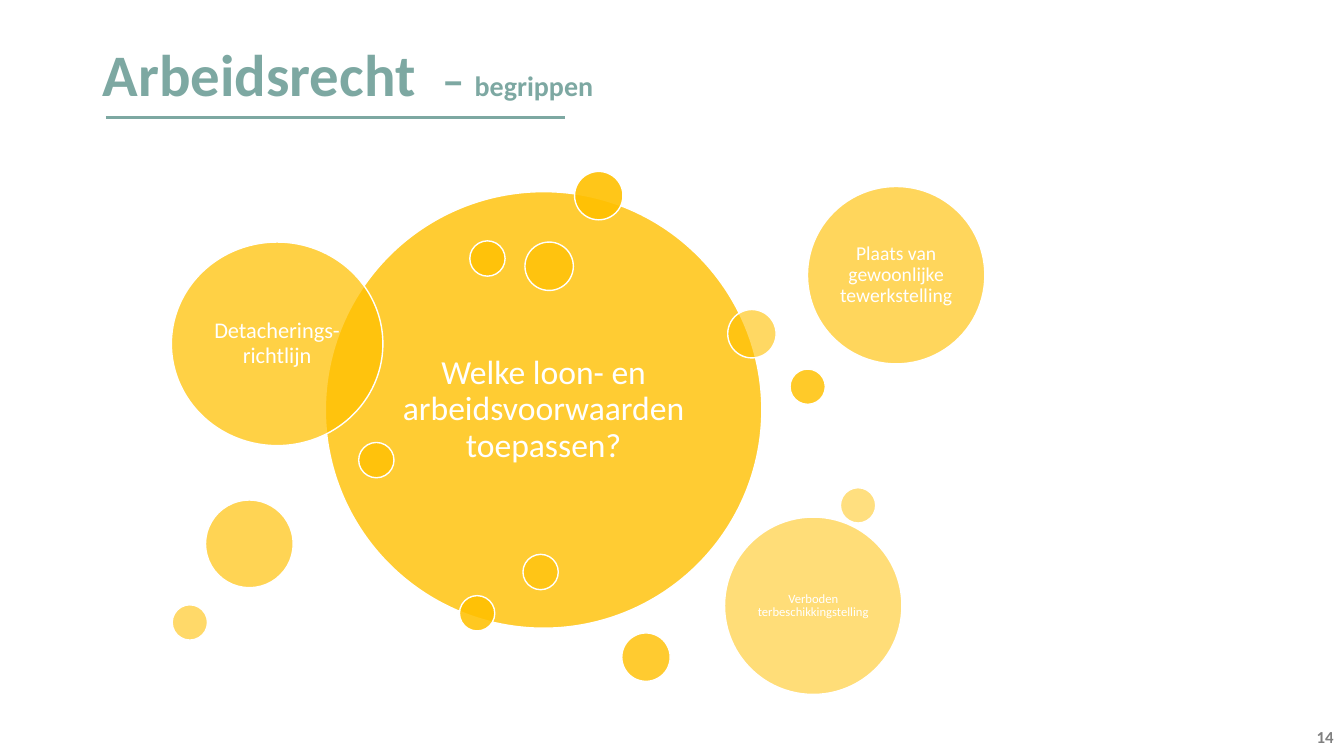
from dataclasses import dataclass

from lxml.etree import SubElement
from pptx import Presentation
from pptx.dml.color import RGBColor
from pptx.enum.shapes import MSO_CONNECTOR, MSO_SHAPE
from pptx.enum.text import MSO_ANCHOR, PP_ALIGN
from pptx.oxml.ns import qn
from pptx.slide import Slide
from pptx.text.text import Font
from pptx.util import Cm, Pt

HUES = {"teal": "7DA8A2", "gold": "FFC000", "white": "FFFFFF", "gray": "808080"}
DOT, BALL, DISC = 0.89, 1.22, 4.47


@dataclass
class Bubble:
    left: float
    top: float
    width: float
    height: float = 0
    text: str = ""
    size: float = 0
    inset: float = 0


HUB = Bubble(8.2, 4.83, 11, text="Welke loon- en arbeidsvoorwaarden toepassen?",
             size=24, inset=0.25)
ORBIT = [
    Bubble(14.48, 4.32, BALL),
    Bubble(11.58, 15.01, DOT),
    Bubble(19.91, 9.3, DOT),
    Bubble(15.67, 15.95, BALL),
    Bubble(11.84, 6.07, DOT),
    Bubble(9.04, 11.15, DOT),
    Bubble(4.32, 6.1, 5.33, 5.13, "Detacherings-richtlijn", 16, 0.18),
    Bubble(13.23, 6.1, BALL),
    Bubble(5.18, 12.6, 2.21),
    Bubble(20.35, 4.7, DISC, text="Plaats van gewoonlijke tewerkstelling",
           size=14, inset=0.15),
    Bubble(18.34, 7.8, BALL),
    Bubble(4.34, 15.24, DOT),
    Bubble(13.18, 13.97, DOT),
    Bubble(18.26, 13.03, DISC, text="Verboden terbeschikkingstelling",
           size=9, inset=0.1),
    Bubble(21.18, 12.29, DOT),
]


def hue(name: str) -> RGBColor:
    return RGBColor.from_string(HUES[name])


def style(font: Font, size: float, name: str, bold: bool = False) -> None:
    font.name = "Calibri"
    font.size = Pt(size)
    font.bold = bold
    font.color.rgb = hue(name)


def draw_bubble(slide: Slide, item: Bubble, alpha: float) -> None:
    shape = slide.shapes.add_shape(
        MSO_SHAPE.OVAL, Cm(item.left), Cm(item.top),
        Cm(item.width), Cm(item.height or item.width))
    shape.shadow.inherit = False
    shape.fill.solid()
    shape.fill.fore_color.rgb = hue("gold")
    color = shape.fill._xPr.find(qn("a:solidFill"))[0]
    SubElement(color, qn("a:alpha")).set("val", str(round(alpha * 1000)))
    shape.line.color.rgb = hue("white")
    shape.line.width = Pt(1)
    if item.text:
        frame = shape.text_frame
        frame.text = item.text
        frame.word_wrap = True
        frame.vertical_anchor = MSO_ANCHOR.MIDDLE
        frame.margin_left = frame.margin_right = Cm(item.inset)
        frame.margin_top = frame.margin_bottom = Cm(item.inset)
        para = frame.paragraphs[0]
        para.alignment = PP_ALIGN.CENTER
        para.line_spacing = 0.9
        style(para.runs[0].font, item.size, "white")


def draw_title(slide: Slide) -> None:
    rule = slide.shapes.add_connector(
        MSO_CONNECTOR.STRAIGHT, Cm(2.67), Cm(2.97), Cm(14.25), Cm(2.97))
    rule.line.color.rgb = hue("teal")
    rule.line.width = Pt(2.25)
    SubElement(rule._element.spPr, qn("a:effectLst"))
    box = slide.shapes.add_textbox(Cm(2.34), Cm(1.02), Cm(29.21), Cm(2.26))
    box.text_frame.word_wrap = True
    para = box.text_frame.paragraphs[0]
    para.line_spacing = 0.9
    for text, size in (("Arbeidsrecht  ", 42), ("– ", 32), ("begrippen", 20)):
        run = para.add_run()
        run.text = text
        style(run.font, size, "teal", True)


def draw_number(slide: Slide) -> None:
    box = slide.shapes.add_textbox(Cm(26.24), Cm(18.06), Cm(7.62), Cm(1.02))
    frame = box.text_frame
    frame.text = "14"
    frame.word_wrap = True
    frame.vertical_anchor = MSO_ANCHOR.MIDDLE
    para = frame.paragraphs[0]
    para.alignment = PP_ALIGN.RIGHT
    style(para.runs[0].font, 12, "gray", True)


def main() -> None:
    """Build the slide of labour law terms and save it."""
    deck = Presentation()
    deck.slide_width, deck.slide_height = Cm(33.87), Cm(19.05)
    slide = deck.slides.add_slide(deck.slide_layouts[6])
    draw_title(slide)
    draw_number(slide)
    draw_bubble(slide, HUB, 80)
    step = 40 / (len(ORBIT) - 1)
    for rank, item in enumerate(ORBIT):
        draw_bubble(slide, item, 90 - rank * step)
    deck.save("out.pptx")


if __name__ == "__main__":
    main()
